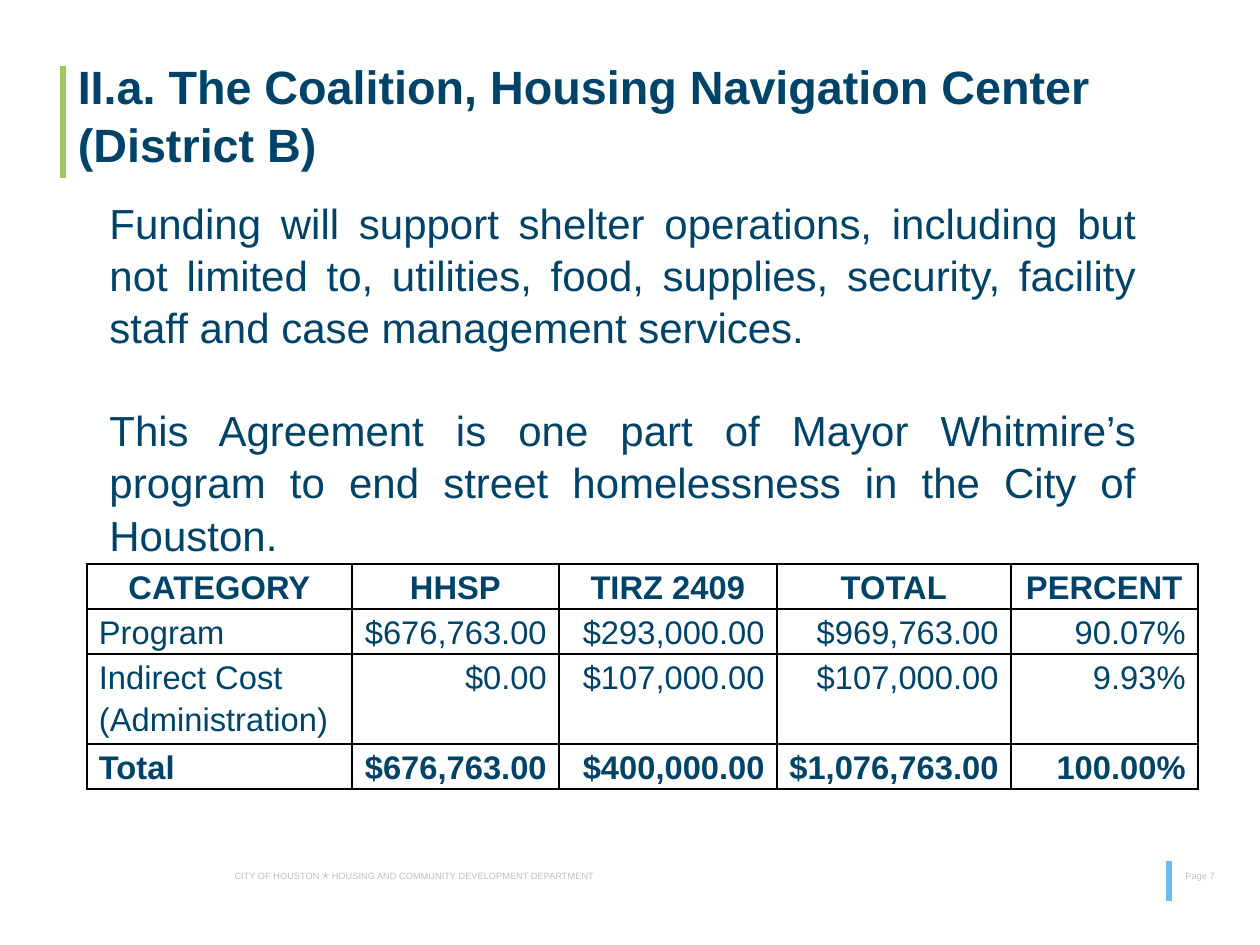
"""Build the Housing Navigation Center funding slide."""
from lxml import etree
from pptx import Presentation
from pptx import util as u
from pptx.dml.color import RGBColor
from pptx.enum import shapes, text
from pptx.oxml import ns

NAVY = RGBColor(0x00, 0x43, 0x68)
GREEN = RGBColor(0xA0, 0xC6, 0x5C)
BLUE = RGBColor(0x6A, 0xBA, 0xEC)
GREY = RGBColor(0xBF, 0xBF, 0xBF)
BLACK = RGBColor(0, 0, 0)
FONT = "Arial"
SCALE = 914400 / 168
ALIGN = text.PP_ALIGN

TITLE = "II.a. The Coalition, Housing Navigation Center\n(District B)"
BODY = (
    "Funding will support shelter operations, including but not limited to, "
    "utilities, food, supplies, security, facility staff and case management services.\n"
    "This Agreement is one part of Mayor Whitmire’s program to end street "
    "homelessness in the City of Houston."
)
FOOTER = [
    ("CITY OF HOUSTON ", 3.9),
    ("⋆", 5.6),
    (" HOUSING AND COMMUNITY DEVELOPMENT DEPARTMENT", 3.9),
]
COLS = [265, 207, 218, 234, 187]
ROWS = [45, 45, 90, 45]
COSTS = [
    ["CATEGORY", "HHSP", "TIRZ 2409", "TOTAL", "PERCENT"],
    ["Program", "$676,763.00", "$293,000.00", "$969,763.00", "90.07%"],
    ["Indirect Cost (Administration)", "$0.00", "$107,000.00", "$107,000.00", "9.93%"],
    ["Total", "$676,763.00", "$400,000.00", "$1,076,763.00", "100.00%"],
]


def px(num):
    """Turn px into EMU."""
    return u.Emu(round(num * SCALE))


class Page:
    """Hold the style and the current slide."""

    def __init__(self, deck):
        """Add a title-only slide."""
        self.slide = deck.slides.add_slide(deck.slide_layouts[5])
        self.items = self.slide.shapes

    def style(self, run, size, color=NAVY, bold=False):
        """Format one run."""
        font = run.font
        font.name, font.size, font.bold = FONT, u.Pt(size), bold
        font.color.rgb = color

    def fill(self, frame, words, size, align, bold=False, gap=0):
        """Set and format the paragraphs of a text frame."""
        frame.text = words
        for num, para in enumerate(frame.paragraphs):
            para.alignment, para.line_spacing = align, 1.04
            para.space_before = u.Pt(gap if num else 0)
            for run in para.runs:
                self.style(run, size, bold=bold)

    def title(self, words, box):
        """Place the title."""
        head = self.items.title
        head.left, head.top, head.width, head.height = map(px, box)
        frame = head.text_frame
        frame.word_wrap = True
        frame.auto_size = text.MSO_AUTO_SIZE.NONE
        frame.vertical_anchor = text.MSO_ANCHOR.TOP
        self.fill(frame, words, 20, ALIGN.LEFT, True)

    def frame(self, box):
        """Add a wrapping text box."""
        frame = self.items.add_textbox(*map(px, box)).text_frame
        frame.word_wrap = True
        return frame

    def body(self, words, box):
        """Add justified body text."""
        self.fill(self.frame(box), words, 18, ALIGN.JUSTIFY, gap=21.5)

    def note(self, parts, box):
        """Add small grey text from sized parts."""
        para = self.frame(box).paragraphs[0]
        for words, size in parts:
            run = para.add_run()
            run.text = words
            self.style(run, size, GREY)

    def bar(self, left, top, end, color):
        """Add an upright accent line."""
        line = self.items.add_connector(
            shapes.MSO_CONNECTOR.STRAIGHT, px(left), px(top), px(left), px(end))
        line.line.color.rgb, line.line.width = color, u.Pt(2.25)
        etree.SubElement(line._element.spPr, ns.qn("a:effectLst"))

    def edge(self, cell):
        """Draw the four borders of a cell."""
        props = cell._tc.get_or_add_tcPr()
        for side in "LRTB":
            line = etree.SubElement(props, ns.qn(f"a:ln{side}"), w=str(u.Pt(1)))
            solid = etree.SubElement(line, ns.qn("a:solidFill"))
            etree.SubElement(solid, ns.qn("a:srgbClr"), val=str(BLACK))

    def table(self, data, left, top):
        """Add the cost table."""
        grid = self.items.add_table(
            len(ROWS), len(COLS), px(left), px(top), px(sum(COLS)), px(sum(ROWS))).table
        grid.first_row = grid.horz_banding = False
        for col, wide in zip(grid.columns, COLS):
            col.width = px(wide)
        for row, (line, high) in enumerate(zip(data, ROWS)):
            grid.rows[row].height = px(high)
            for col, words in enumerate(line):
                cell = grid.cell(row, col)
                self.edge(cell)
                cell.fill.background()
                cell.margin_left = cell.margin_right = px(12)
                cell.margin_top = cell.margin_bottom = 0
                side = ALIGN.RIGHT if col else ALIGN.LEFT
                align = side if row else ALIGN.CENTER
                self.fill(cell.text_frame, words, 14, align, row in (0, len(ROWS) - 1))
                cell.text_frame.paragraphs[0].line_spacing = 1.15


def main():
    """Build and save the deck."""
    deck = Presentation()
    deck.slide_width, deck.slide_height = px(1260), px(945)
    page = Page(deck)
    page.bar(63, 66, 178, GREEN)
    page.note(FOOTER, (218, 858, 514, 34))
    page.bar(1169, 861, 901, BLUE)
    page.note([("Page 7", 3.9)], (1169, 862, 91, 40))
    page.title(TITLE, (61, 47, 1199, 129))
    page.body(BODY, (93, 187, 1060, 373))
    page.table(COSTS, 87, 564)
    deck.save("out.pptx")


if __name__ == "__main__":
    main()
